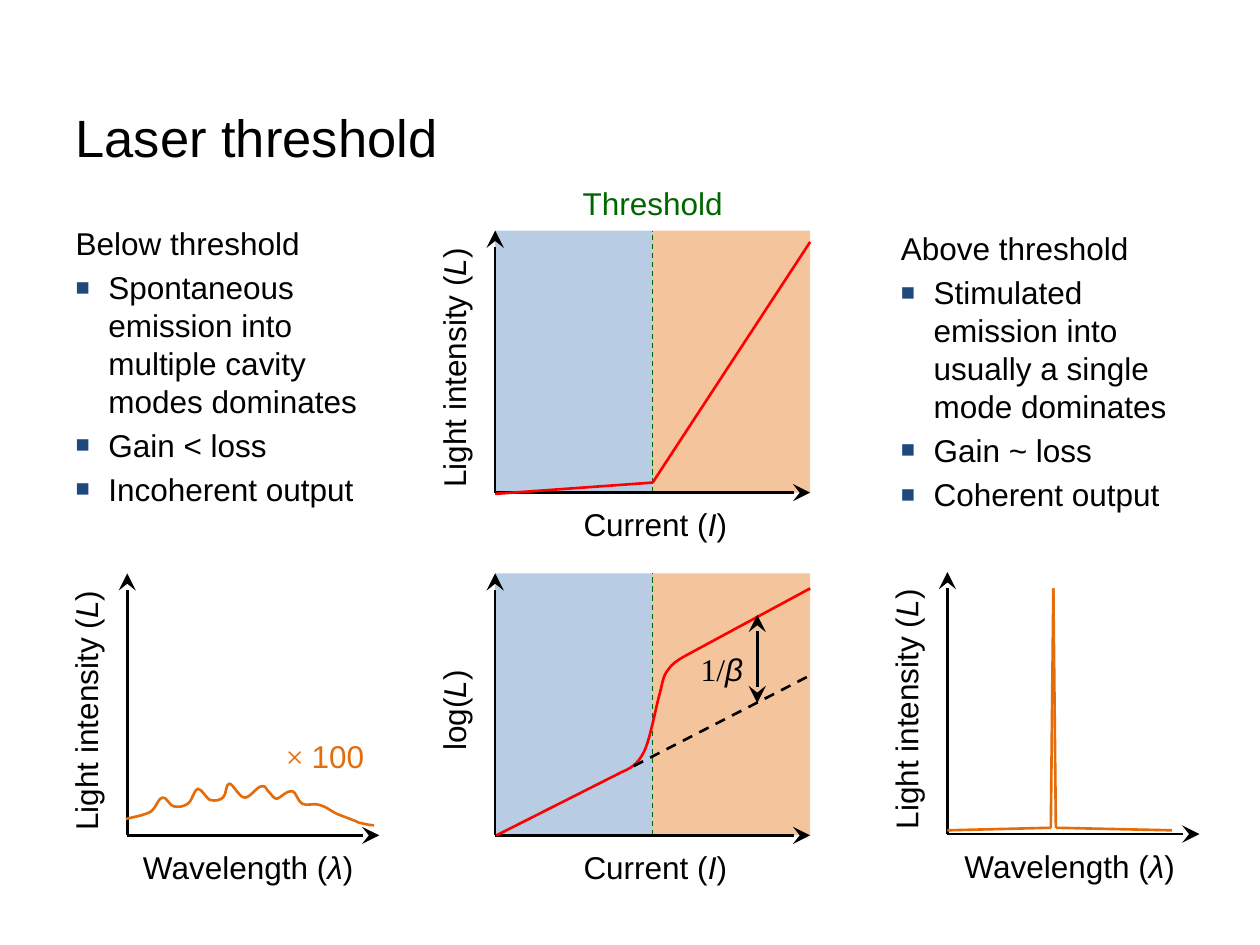
from dataclasses import dataclass

from lxml import etree
from pptx import Presentation
from pptx import util as u
from pptx.dml.color import RGBColor
from pptx.enum import dml, shapes, text
from pptx.oxml.ns import qn


@dataclass(frozen=True)
class Theme:
    sans: str = "Arial"
    serif: str = "Times New Roman"
    black: str = "000000"
    red: str = "FF0000"
    green: str = "006600"
    orange: str = "E46C0A"
    blue: str = "4F81BD"
    bullet: str = "1F497D"
    title_size: int = 30
    text_size: int = 18
    line: float = 1.5
    thin: float = 0.75


THEME = Theme()

# Content
TITLE = "Laser threshold"
LISTS = [
    ((0.5, 1.73), "Below threshold",
     ["Spontaneous emission into multiple cavity modes dominates",
      "Gain < loss", "Incoherent output"]),
    ((7.05, 1.77), "Above threshold",
     ["Stimulated emission into usually a single mode dominates",
      "Gain ~ loss", "Coherent output"]),
]
INTENSITY = ("Light intensity (", "L", ")")
LOG_INTENSITY = ("log(", "L", ")")
CURRENT = ("Current (", "I", ")")
WAVELENGTH = ("Wavelength (", "λ", ")")

# Plots: origin, axis length, labels with widths, x label centre, shaded regimes
AXIS_HEIGHT = 2.08
PLOTS = [
    ((3.93, 3.91), 2.5, INTENSITY, 2.12, CURRENT, 1.35, 1.27, True),
    ((3.93, 6.63), 2.5, LOG_INTENSITY, 0.85, CURRENT, 1.35, 1.27, True),
    ((1.01, 6.63), 2, INTENSITY, 2.12, WAVELENGTH, 1.9, 0.96, False),
    ((7.52, 6.62), 2, INTENSITY, 2.12, WAVELENGTH, 1.9, 0.97, False),
]
CURVE_LINES = [
    (THEME.red, [(3.93, 3.92), (5.18, 3.83), (6.43, 1.92)]),
    (THEME.red, [(3.94, 6.63), (4.93, 6.13)]),
    (THEME.red, [(5.43, 5.21), (6.43, 4.67)]),
    (THEME.orange, [(7.52, 6.59), (8.34, 6.57), (8.36, 4.67),
                    (8.38, 6.57), (9.3, 6.59)]),
]
# Bezier curves: start, then two controls and an end for each segment
TURN_ON = [
    (4.93, 6.13), (5, 6.1), (5.06, 6.07), (5.11, 5.97),
    (5.16, 5.87), (5.2, 5.64), (5.23, 5.53),
    (5.26, 5.42), (5.26, 5.37), (5.3, 5.32),
    (5.33, 5.27), (5.38, 5.24), (5.43, 5.21),
]
SPECTRUM = [
    (1, 6.5), (1.08, 6.48), (1.15, 6.47), (1.2, 6.44),
    (1.24, 6.41), (1.26, 6.33), (1.29, 6.33),
    (1.32, 6.32), (1.35, 6.4), (1.38, 6.4),
    (1.42, 6.41), (1.46, 6.4), (1.49, 6.38),
    (1.53, 6.35), (1.54, 6.27), (1.57, 6.26),
    (1.6, 6.26), (1.64, 6.34), (1.67, 6.35),
    (1.71, 6.36), (1.75, 6.35), (1.77, 6.33),
    (1.8, 6.31), (1.79, 6.22), (1.82, 6.22),
    (1.85, 6.22), (1.9, 6.33), (1.94, 6.33),
    (1.98, 6.34), (2.04, 6.24), (2.08, 6.24),
    (2.11, 6.23), (2.12, 6.28), (2.14, 6.29),
    (2.16, 6.31), (2.17, 6.34), (2.2, 6.34),
    (2.23, 6.33), (2.28, 6.27), (2.32, 6.28),
    (2.35, 6.28), (2.36, 6.36), (2.4, 6.38),
    (2.44, 6.4), (2.49, 6.37), (2.54, 6.39),
    (2.59, 6.4), (2.64, 6.45), (2.7, 6.47),
    (2.75, 6.49), (2.81, 6.51), (2.85, 6.53),
    (2.9, 6.54), (2.93, 6.55), (2.97, 6.55),
]


def write(paragraph, words, size=THEME.text_size, color=THEME.black,
          font=THEME.sans, italic=False):
    run = paragraph.add_run()
    run.text = words
    run.font.size = u.Pt(size)
    run.font.name = font
    run.font.italic = italic
    run.font.color.rgb = RGBColor.from_string(color)


def place(shape, left, top, width, height):
    shape.left, shape.top = u.Inches(left), u.Inches(top)
    shape.width, shape.height = u.Inches(width), u.Inches(height)


def add_label(slide, center, width, runs, rotation=0):
    """Add a one-line label; runs are (words, format) pairs."""
    height = 0.4
    box = slide.shapes.add_textbox(
        u.Inches(center[0] - width / 2), u.Inches(center[1] - height / 2),
        u.Inches(width), u.Inches(height))
    box.rotation = rotation
    box.text_frame.word_wrap = False
    paragraph = box.text_frame.paragraphs[0]
    paragraph.alignment = text.PP_ALIGN.CENTER
    for words, style in runs:
        write(paragraph, words, **style)


def symbol_runs(label):
    before, symbol, after = label
    return [(before, {}), (symbol, {"italic": True}), (after, {})]


def style_line(shape, color, width=THEME.line, dashed=False):
    shape.line.color.rgb = RGBColor.from_string(color)
    shape.line.width = u.Pt(width)
    if dashed:
        shape.line.dash_style = dml.MSO_LINE.DASH


def add_line(slide, start, end, color=THEME.black, width=THEME.line,
             dashed=False, arrows=()):
    line = slide.shapes.add_connector(
        shapes.MSO_CONNECTOR.STRAIGHT, *map(u.Inches, (*start, *end)))
    style_line(line, color, width, dashed)
    properties = line.element.spPr
    for tag in arrows:
        etree.SubElement(properties.find(qn("a:ln")), qn(tag),
                         type="stealth", w="lg", len="lg")
    etree.SubElement(properties, qn("a:effectLst"))


def add_curve(slide, controls, color):
    start, *rest = [(u.Inches(x), u.Inches(y)) for x, y in controls]
    builder = slide.shapes.build_freeform(*start)
    builder.add_line_segments(rest, close=False)
    curve = builder.convert_to_shape()
    # Turn each three straight segments into one Bezier segment
    segments = list(curve.element.spPr.iter(qn("a:lnTo")))
    outline = segments[0].getparent()
    for i in range(0, len(segments), 3):
        bezier = etree.SubElement(outline, qn("a:cubicBezTo"))
        for segment in segments[i:i + 3]:
            bezier.append(segment[0])
            outline.remove(segment)
    curve.fill.background()
    curve.shadow.inherit = False
    style_line(curve, color)


def add_regime(slide, left, top, width, color):
    regime = slide.shapes.add_shape(shapes.MSO_SHAPE.RECTANGLE, 0, 0, 0, 0)
    place(regime, left, top, width, AXIS_HEIGHT)
    regime.shadow.inherit = False
    regime.line.fill.background()
    regime.fill.solid()
    regime.fill.fore_color.rgb = RGBColor.from_string(color)
    fill_color = regime.element.spPr.find(qn("a:solidFill"))[0]
    etree.SubElement(fill_color, qn("a:alpha"), val="40000")


def add_plot(slide, origin, length, y_label, y_width, x_label, x_width, x_center, shaded):
    x, y = origin
    top = y - AXIS_HEIGHT
    if shaded:
        half = length / 2
        for i, color in enumerate((THEME.blue, THEME.orange)):
            add_regime(slide, x + i * half, top, half, color)
        add_line(slide, (x + half, y), (x + half, top), THEME.green, THEME.thin, True)
    for end in ((x, top), (x + length, y)):
        add_line(slide, origin, end, arrows=["a:tailEnd"])
    add_label(slide, (x - 0.33, y - 0.99), y_width, symbol_runs(y_label), rotation=-90)
    add_label(slide, (x + x_center, y + 0.25), x_width, symbol_runs(x_label))


def fill_list(body, position, heading, items):
    place(body, *position, 2.67, 2.67)
    frame = body.text_frame
    frame.auto_size = text.MSO_AUTO_SIZE.NONE
    for i, words in enumerate([heading, *items]):
        paragraph = frame.add_paragraph() if i else frame.paragraphs[0]
        paragraph.space_before = u.Pt(3.6 if i else 0)
        properties = paragraph._p.get_or_add_pPr()
        properties.set("marL", str(u.Inches(0.26)))
        properties.set("indent", str(u.Inches(-0.26)))
        if i:
            color = etree.SubElement(properties, qn("a:buClr"))
            etree.SubElement(color, qn("a:srgbClr"), val=THEME.bullet)
            etree.SubElement(properties, qn("a:buSzPct"), val="75000")
            etree.SubElement(properties, qn("a:buFont"), typeface=THEME.sans)
            etree.SubElement(properties, qn("a:buChar"), char="■")
        else:
            etree.SubElement(properties, qn("a:buNone"))
        write(paragraph, words)


def main():
    deck = Presentation()
    deck.slide_width, deck.slide_height = u.Inches(10), u.Inches(7.5)
    slide = deck.slides.add_slide(deck.slide_layouts.get_by_name("Two Content"))

    # Title and lists
    title, *bodies = list(slide.placeholders)[:3]
    place(title, 0.5, 0.5, 9, 1.17)
    title.text_frame.vertical_anchor = text.MSO_ANCHOR.MIDDLE
    title.text_frame.paragraphs[0].alignment = text.PP_ALIGN.LEFT
    write(title.text_frame.paragraphs[0], TITLE, size=THEME.title_size)
    for body, content in zip(bodies, LISTS):
        fill_list(body, *content)

    # Axes, then the curves on them
    for plot in PLOTS:
        add_plot(slide, *plot)
    for color, points in CURVE_LINES:
        for start, end in zip(points, points[1:]):
            add_line(slide, start, end, color)
    add_curve(slide, TURN_ON, THEME.red)
    add_curve(slide, SPECTRUM, THEME.orange)

    # Annotations
    add_line(slide, (5.03, 6.08), (6.43, 5.36), dashed=True)
    add_line(slide, (6.01, 5.58), (6.01, 4.88), arrows=["a:headEnd", "a:tailEnd"])
    add_label(slide, (5.18, 1.61), 1.32, [("Threshold", {"color": THEME.green})])
    add_label(slide, (5.73, 5.31), 0.54,
              [("1/", {"font": THEME.serif}), ("β", {"italic": True})])
    add_label(slide, (2.58, 6), 0.83,
              [("× ", {"font": THEME.serif, "color": THEME.orange}),
               ("100", {"color": THEME.orange})])
    deck.save("out.pptx")


if __name__ == "__main__":
    main()
